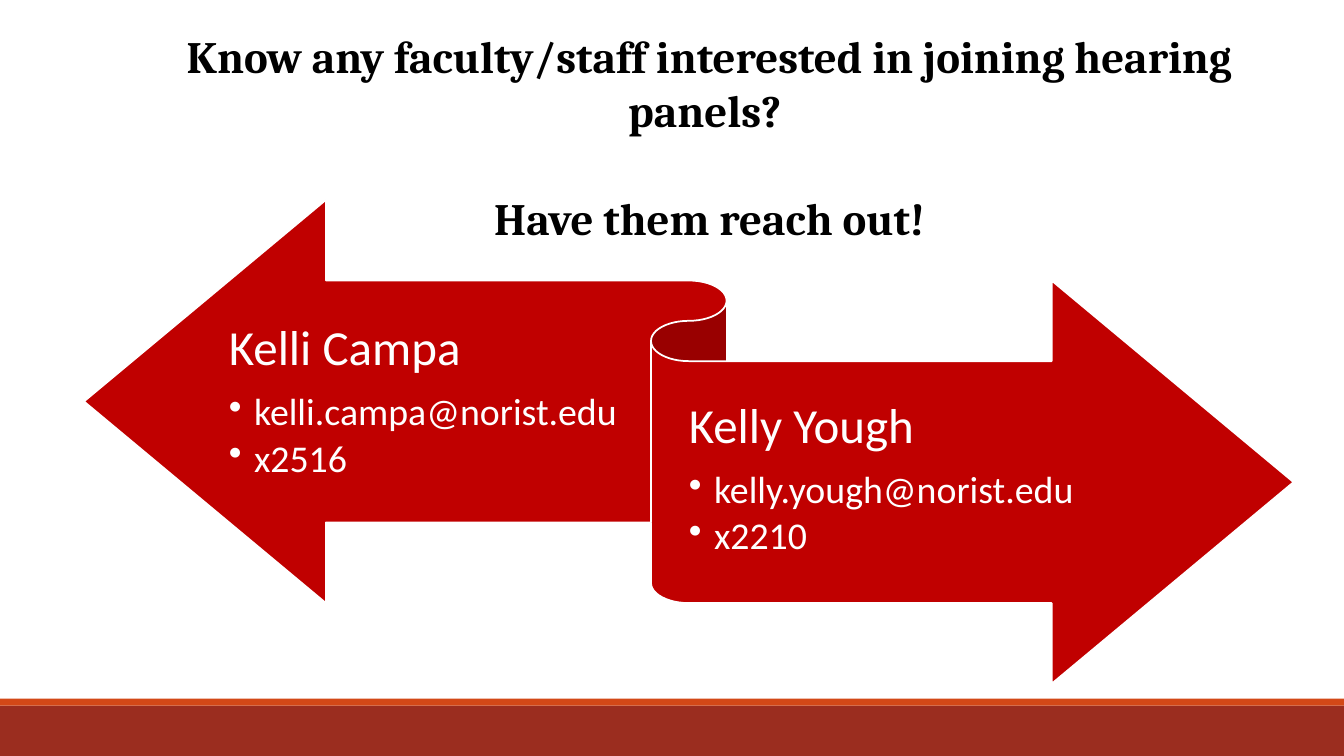
from pptx import Presentation
from pptx.dml.color import RGBColor
from pptx.enum import shapes, text
from pptx.oxml import parse_xml
from pptx.oxml.ns import nsdecls
from pptx.util import Pt

WIDE, HIGH = 960, 540
WHITE = "FFFFFF"


def paint(target, tint):
    target.solid()
    target.fore_color.rgb = RGBColor.from_string(tint)


def add_form(slide, kind, left, top, wide, high, tint, edge=None):
    form = slide.shapes.add_shape(kind, Pt(left), Pt(top), Pt(wide), Pt(high))
    form.shadow.inherit = False
    paint(form.fill, tint)
    if edge:
        paint(form.line.fill, edge)
        form.line.width = Pt(1.25)
    else:
        form.line.fill.background()


def add_box(slide, left, top, wide, high):
    box = slide.shapes.add_textbox(Pt(left), Pt(top), Pt(wide), Pt(high))
    frame = box.text_frame
    frame.word_wrap = True
    return frame


def add_run(para, words, face, size, tint, bold=False):
    run = para.add_run()
    run.text = words
    run.font.name = face
    run.font.size = Pt(size)
    run.font.bold = bold
    paint(run.font.fill, tint)


def set_dot(para):
    props = para._p.get_or_add_pPr()
    props.set("marL", str(Pt(18)))
    props.set("indent", str(-Pt(18)))
    props.append(parse_xml(f'<a:buChar {nsdecls("a")} char="•"/>'))


def add_card(slide, left, top, wide, high, name, facts):
    frame = add_box(slide, left, top, wide, high)
    frame.vertical_anchor = text.MSO_ANCHOR.MIDDLE
    frame.margin_left = frame.margin_right = 0
    frame.margin_top, frame.margin_bottom = Pt(10), Pt(11)
    head = frame.paragraphs[0]
    head.line_spacing = 0.9
    head.space_after = Pt(12)
    add_run(head, name, "Calibri", 35, WHITE)
    for fact in facts:
        para = frame.add_paragraph()
        para.level = 1
        para.line_spacing = 0.9
        para.space_after = Pt(4)
        set_dot(para)
        add_run(para, fact, "Calibri", 27, WHITE)


def add_title(slide, left, top, wide, high, lines, gap):
    frame = add_box(slide, left, top, wide, high)
    frame.auto_size = text.MSO_AUTO_SIZE.SHAPE_TO_FIT_TEXT
    for i, line in enumerate(lines):
        para = frame.add_paragraph() if i else frame.paragraphs[0]
        para.alignment = text.PP_ALIGN.CENTER
        if i:
            para.space_before = Pt(gap)
        add_run(para, line, "Cambria", 32, "000000", True)


def main():
    deck = Presentation()
    deck.slide_width, deck.slide_height = Pt(WIDE), Pt(HIGH)
    slide = deck.slides.add_slide(deck.slide_layouts[6])
    kinds = shapes.MSO_SHAPE

    add_form(slide, kinds.RECTANGLE, 0, 504, WIDE, 36, "9B2D1F")
    add_form(slide, kinds.RECTANGLE, 0, 499, WIDE, 5, "D34817")
    add_form(slide, kinds.LEFT_RIGHT_RIBBON, 60, 142.8, 864, 345.6, "C00000", WHITE)

    add_card(slide, 163.5, 203, 285, 169.2, "Kelli Campa",
             ["kelli.campa@norist.edu", "x2516"])
    add_card(slide, 492, 258.5, 337, 169.2, "Kelly Yough",
             ["kelly.yough@norist.edu", "x2210"])
    add_title(slide, 102, 17.3, 810, 162.7,
              ["Know any faculty/staff interested in joining hearing panels? ",
               "Have them reach out!"], 38.5)

    deck.save("out.pptx")


if __name__ == "__main__":
    main()
